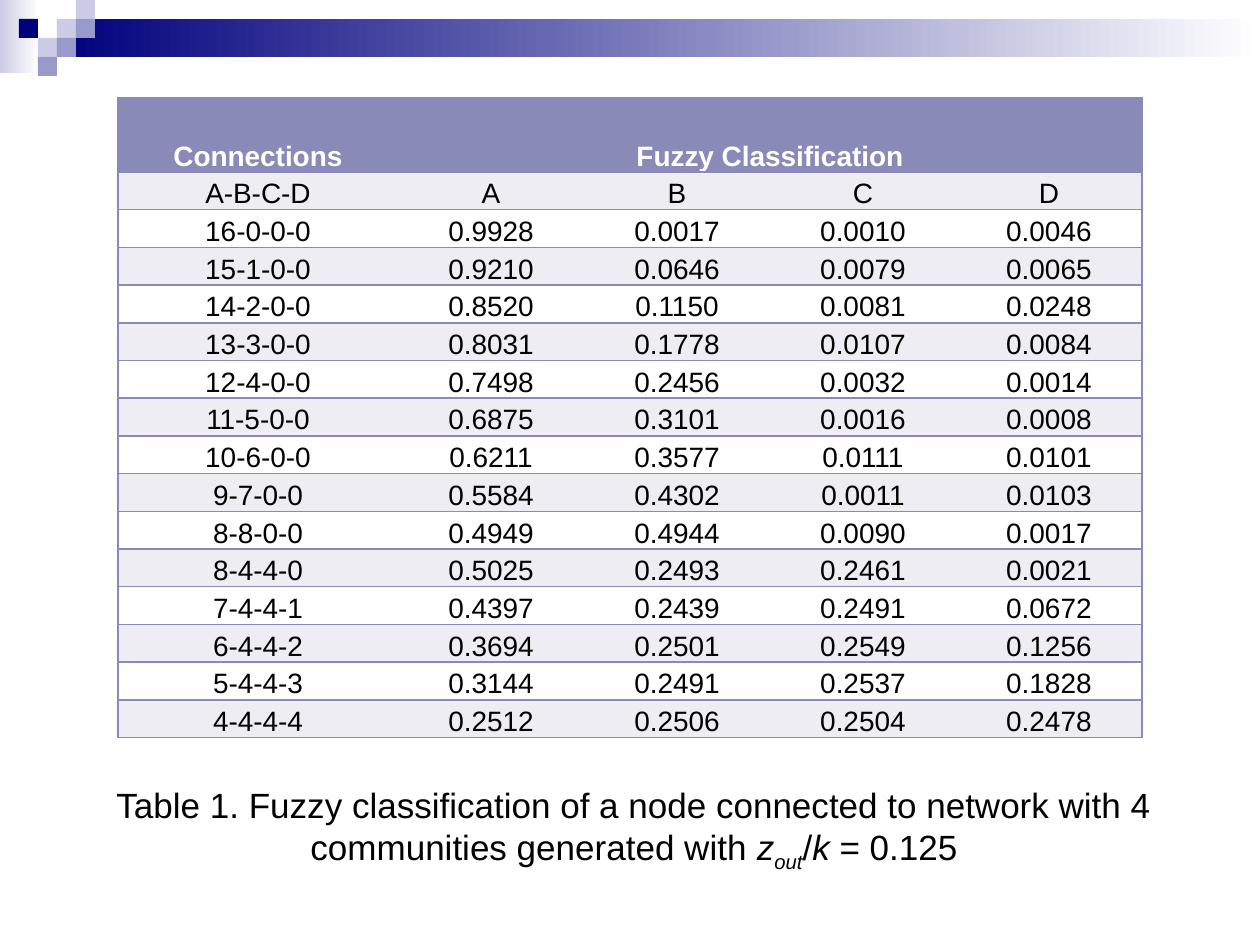
from lxml.etree import SubElement
from pptx import Presentation
from pptx.dml.color import RGBColor
from pptx.enum.shapes import MSO_SHAPE as SHAPE
from pptx.enum.text import MSO_ANCHOR as ANCHOR, MSO_AUTO_SIZE as AUTO, PP_ALIGN as ALIGN
from pptx.oxml.ns import qn
from pptx.util import Pt

EMU_PER_PX = 914400 / 126
NAVY, LILAC, PALE = "00007D", "9999CC", "CCCCE6"
HEADER, BAND, WHITE, BLACK = "8A8AB9", "EDEDF3", "FFFFFF", "000000"


def px(n):
    return round(n * EMU_PER_PX)


def rgb(value):
    return RGBColor.from_string(value)


class Deck:
    font = "Arial"

    def __init__(self, width, height):
        self.prs = Presentation()
        self.prs.slide_width, self.prs.slide_height = px(width), px(height)
        self.s = self.prs.slides.add_slide(self.prs.slide_layouts[6])

    def rect(self, x, y, w, h, *colors):
        sp = self.s.shapes.add_shape(SHAPE.RECTANGLE, px(x), px(y), px(w), px(h))
        sp.shadow.inherit = False
        sp.line.fill.background()
        if len(colors) == 1:
            sp.fill.solid()
            sp.fill.fore_color.rgb = rgb(colors[0])
        else:
            sp.fill.gradient()
            sp.fill.gradient_angle = 0
            for stop, color in zip(sp.fill.gradient_stops, colors):
                stop.color.rgb = rgb(color)

    def run(self, p, text, size, color=BLACK, bold=False, italic=False, baseline=0):
        r = p.add_run()
        r.text = text
        f = r.font
        f.name, f.size, f.bold, f.italic = self.font, Pt(size), bold, italic
        f.color.rgb = rgb(color)
        if baseline:
            r._r.get_or_add_rPr().set("baseline", str(baseline * 1000))

    def borders(self, cell, sides, color):
        tc_pr = cell._tc.get_or_add_tcPr()
        for i, side in enumerate("LRTB"):
            ln = SubElement(tc_pr, qn(f"a:ln{side}"), w=str(Pt(1)))
            if side in sides:
                fill = SubElement(ln, qn("a:solidFill"))
                SubElement(fill, qn("a:srgbClr"), val=color)
            else:
                SubElement(ln, qn("a:noFill"))
            tc_pr.insert(i, ln)

    def table(self, x, y, widths, header_height, height, rows):
        row_height = (height - header_height) / (len(rows) - 1)
        frame = self.s.shapes.add_table(len(rows), len(widths), px(x), px(y),
                                        px(sum(widths)), px(height))
        table = frame.table
        for column, width in zip(table.columns, widths):
            column.width = px(width)
        for i, values in enumerate(rows):
            table.rows[i].height = px(row_height if i else header_height)
            fill = HEADER if i == 0 else BAND if i % 2 else WHITE
            for j, value in enumerate(values):
                cell = table.cell(i, j)
                cell.fill.solid()
                cell.fill.fore_color.rgb = rgb(fill)
                cell.vertical_anchor = ANCHOR.BOTTOM
                cell.margin_left = cell.margin_right = cell.margin_top = px(1)
                cell.margin_bottom = 0
                sides = "TB" + "L" * (j == 0) + "R" * (j == len(widths) - 1)
                self.borders(cell, sides, HEADER)
                p = cell.text_frame.paragraphs[0]
                p.alignment = ALIGN.CENTER
                if value:
                    self.run(p, value, 16, BLACK if i else WHITE, bold=i == 0)
        table.cell(0, 1).merge(table.cell(0, len(widths) - 1))
        self.borders_right(table.cell(0, 1))

    def borders_right(self, cell):
        tc_pr = cell._tc.tcPr
        for side in "LRTB":
            tc_pr.remove(tc_pr.find(qn(f"a:ln{side}")))
        self.borders(cell, "RTB", HEADER)

    def caption(self, x, y, w, h, runs):
        tf = self.s.shapes.add_textbox(px(x), px(y), px(w), px(h)).text_frame
        tf.word_wrap = True
        tf.auto_size = AUTO.SHAPE_TO_FIT_TEXT
        p = tf.paragraphs[0]
        p.alignment = ALIGN.CENTER
        for text, style in runs:
            self.run(p, text, 20, **style)


ROWS = [
    ["Connections", "Fuzzy Classification", "", "", ""],
    ["A-B-C-D", "A", "B", "C", "D"],
    ["16-0-0-0", "0.9928", "0.0017", "0.0010", "0.0046"],
    ["15-1-0-0", "0.9210", "0.0646", "0.0079", "0.0065"],
    ["14-2-0-0", "0.8520", "0.1150", "0.0081", "0.0248"],
    ["13-3-0-0", "0.8031", "0.1778", "0.0107", "0.0084"],
    ["12-4-0-0", "0.7498", "0.2456", "0.0032", "0.0014"],
    ["11-5-0-0", "0.6875", "0.3101", "0.0016", "0.0008"],
    ["10-6-0-0", "0.6211", "0.3577", "0.0111", "0.0101"],
    ["9-7-0-0", "0.5584", "0.4302", "0.0011", "0.0103"],
    ["8-8-0-0", "0.4949", "0.4944", "0.0090", "0.0017"],
    ["8-4-4-0", "0.5025", "0.2493", "0.2461", "0.0021"],
    ["7-4-4-1", "0.4397", "0.2439", "0.2491", "0.0672"],
    ["6-4-4-2", "0.3694", "0.2501", "0.2549", "0.1256"],
    ["5-4-4-3", "0.3144", "0.2491", "0.2537", "0.1828"],
    ["4-4-4-4", "0.2512", "0.2506", "0.2504", "0.2478"],
]
CAPTION = [
    ("Table 1. Fuzzy classification of a node connected to network with 4 "
     "communities generated with ", {}),
    ("z", {"italic": True}),
    ("out", {"italic": True, "baseline": -25}),
    ("/", {}),
    ("k", {"italic": True}),
    (" = 0.125", {}),
]
TILE = 19
TILES = [(3, 1, PALE), (4, 0, PALE), (4, 1, LILAC), (2, 2, PALE),
         (1, 1, NAVY), (3, 2, LILAC), (2, 3, LILAC)]


def main():
    deck = Deck(1260, 945)
    deck.rect(0, 0, 39, 73, PALE, WHITE)
    deck.rect(3 * TILE, TILE, 1260 - 3 * TILE, 2 * TILE, NAVY, WHITE)
    for column, row, color in TILES:
        deck.rect(column * TILE, row * TILE, TILE, TILE, color)
    deck.table(118, 98, [280] + [186] * 4, 74, 640, ROWS)
    deck.caption(88, 777, 1092, 97, CAPTION)
    deck.prs.save("out.pptx")


if __name__ == "__main__":
    main()
